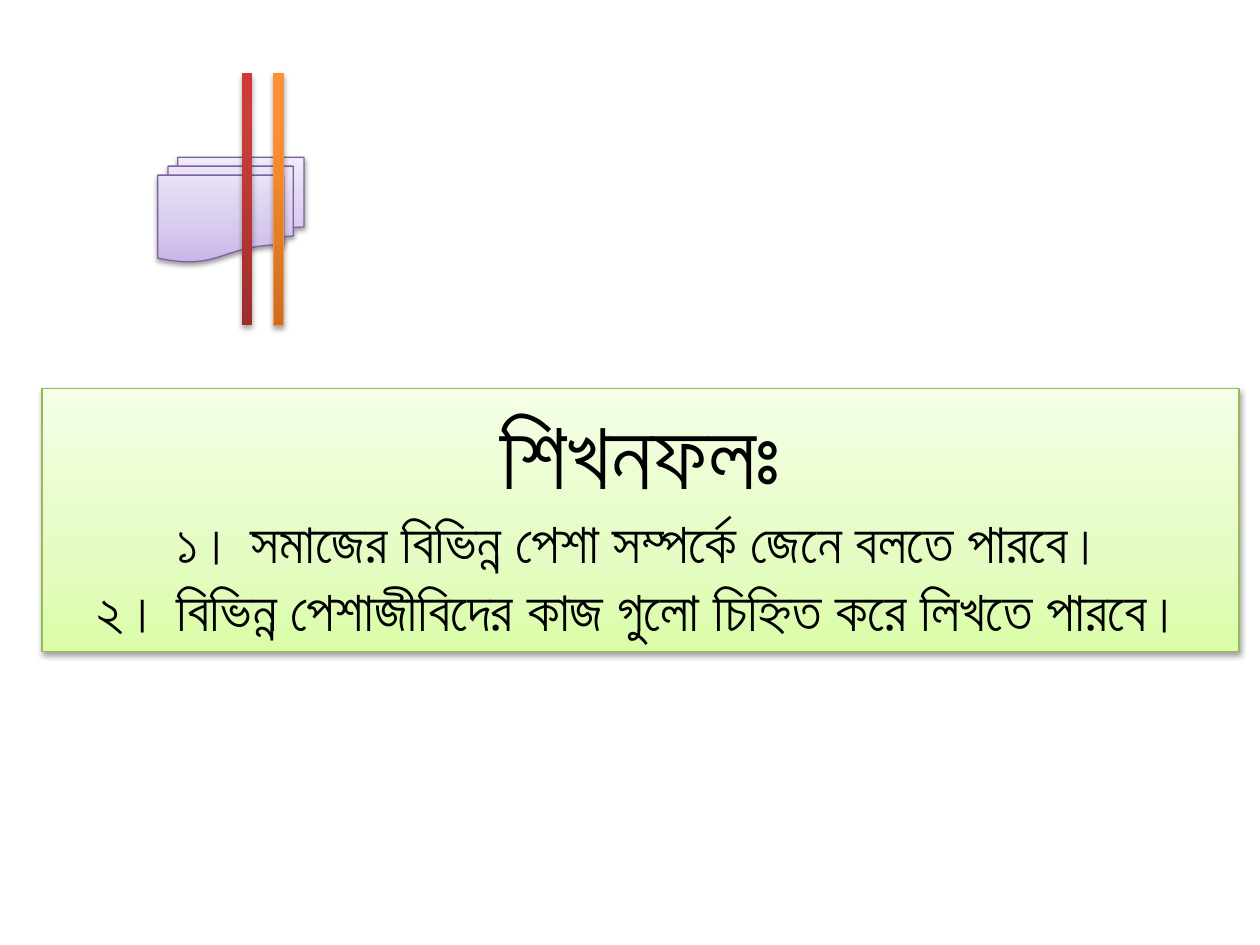
from lxml.etree import SubElement
from pptx import Presentation
from pptx.dml.color import RGBColor
from pptx.enum.shapes import MSO_SHAPE
from pptx.enum.text import MSO_ANCHOR, MSO_AUTO_SIZE, PP_ALIGN
from pptx.oxml.ns import qn
from pptx.util import Cm, Pt

HEADING = "শিখনফলঃ"
OUTCOMES = [
    "১। সমাজের বিভিন্ন পেশা সম্পর্কে জেনে বলতে পারবে।",
    "২। বিভিন্ন পেশাজীবিদের কাজ গুলো চিহ্নিত করে লিখতে পারবে।",
]


def color(value):
    return RGBColor.from_string(value)


def add_color(parent, value):
    return SubElement(parent, qn("a:srgbClr"), val=value)


def fill_upward(shape, stops):
    shape.fill.gradient()
    gradient = shape._element.spPr.find(qn("a:gradFill"))
    stop_list = gradient.find(qn("a:gsLst"))
    for stop in list(stop_list):
        stop_list.remove(stop)
    for percent, value in stops:
        add_color(SubElement(stop_list, qn("a:gs"), pos=str(percent * 1000)), value)
    gradient.find(qn("a:lin")).set("ang", str(270 * 60000))


def cast_shadow(shape, opacity, distance):
    shape.shadow.inherit = False
    effects = shape._element.spPr.find(qn("a:effectLst"))
    shadow = SubElement(
        effects, qn("a:outerShdw"), blurRad=str(Pt(3.1)), dist=str(Pt(distance)),
        dir=str(90 * 60000), rotWithShape="0")
    SubElement(add_color(shadow, "000000"), qn("a:alpha"), val=str(opacity * 1000))


def add_raised(shapes, preset, box, stops, outline=None, opacity=38, distance=1.6):
    raised = shapes.add_shape(preset, *[Cm(length) for length in box])
    fill_upward(raised, stops)
    if outline:
        raised.line.color.rgb = color(outline)
        raised.line.width = Pt(0.75)
    else:
        raised.line.fill.background()
    cast_shadow(raised, opacity, distance)
    return raised


def add_outcomes(slide, box):
    panel = add_raised(slide.shapes, MSO_SHAPE.RECTANGLE, box,
                       [(0, "DAFDA7"), (35, "E4FCC2"), (100, "F5FFE7")], "98B955")
    frame = panel.text_frame
    frame.word_wrap = True
    frame.auto_size = MSO_AUTO_SIZE.SHAPE_TO_FIT_TEXT
    frame.vertical_anchor = MSO_ANCHOR.TOP
    frame.text = "\n".join([HEADING, *OUTCOMES])
    for paragraph, size in zip(frame.paragraphs, [54, 32, 32]):
        paragraph.alignment = PP_ALIGN.CENTER
        paragraph.font.name = "Lato"
        paragraph.font.size = Pt(size)
        paragraph.font.color.rgb = color("000000")


def add_emblem(slide, left, top, height):
    emblem = slide.shapes.add_group_shape().shapes
    add_raised(emblem, MSO_SHAPE.FLOWCHART_MULTIDOCUMENT,
               (left, top + height / 3, 2.95, 2.11),
               [(0, "C9B5E8"), (35, "D8CBEE"), (100, "F0EAF9")], "7D60A0")
    bars = [
        (1.69, [(0, "9C2F2D"), (80, "CB3E3A"), (100, "CE3B37")], None),
        (2.33, [(0, "CC6E20"), (80, "FF9034"), (100, "FF9136")], "F69240"),
    ]
    for offset, stops, outline in bars:
        add_raised(emblem, MSO_SHAPE.RECTANGLE, (left + offset, top, 0.21, height),
                   stops, outline, opacity=35, distance=1.8)


def main():
    presentation = Presentation()
    presentation.slide_width = Cm(25.4)
    presentation.slide_height = Cm(19.05)
    slide = presentation.slides.add_slide(presentation.slide_layouts[6])
    add_outcomes(slide, (0.85, 7.83, 24.13, 5.31))
    add_emblem(slide, 3.18, 1.48, 5.08)
    presentation.save("out.pptx")


if __name__ == "__main__":
    main()
